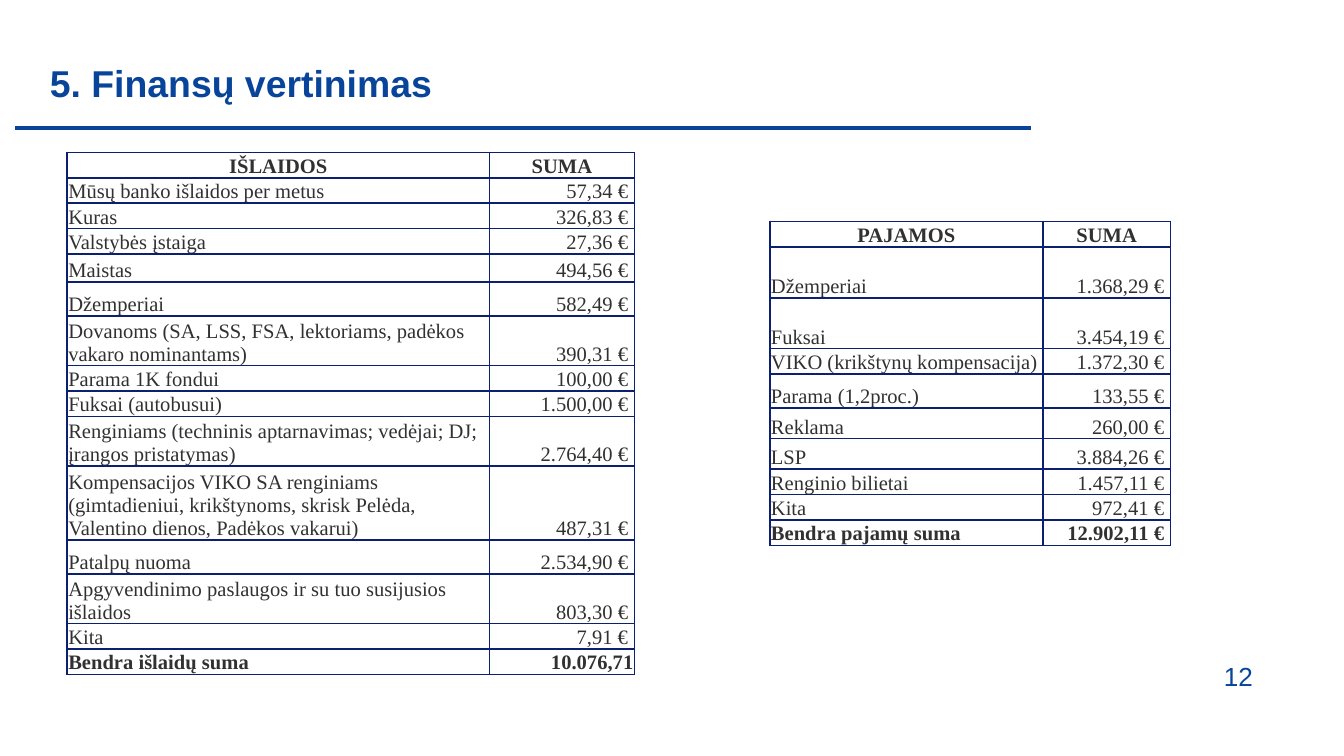
from dataclasses import dataclass

from lxml import etree
from pptx import Presentation
from pptx.dml.color import RGBColor
from pptx.enum.shapes import MSO_CONNECTOR
from pptx.enum.text import MSO_ANCHOR, PP_ALIGN
from pptx.oxml.ns import qn
from pptx.util import Cm, Pt

LEFT, CENTER, RIGHT = PP_ALIGN.LEFT, PP_ALIGN.CENTER, PP_ALIGN.RIGHT
MIDDLE, BOTTOM = MSO_ANCHOR.MIDDLE, MSO_ANCHOR.BOTTOM
STRAIGHT = MSO_CONNECTOR.STRAIGHT

BLUE, NAVY, INK = "08459A", "0B2070", "313132"
SINGLE, RELAXED, TALL, DOUBLE, TRIPLE = 0.48, 0.58, 0.64, 0.94, 1.4


@dataclass
class Entry:
    label: str
    amount: str
    height: float = SINGLE


@dataclass
class Ledger:
    left: float
    top: float
    label_width: float
    amount_width: float
    entries: list[Entry]


EXPENSES = Ledger(1.27, 2.88, 7.98, 2.74, [
    Entry("IŠLAIDOS", "SUMA"),
    Entry("Mūsų banko išlaidos per metus", "57,34 €"),
    Entry("Kuras", "326,83 €"),
    Entry("Valstybės įstaiga", "27,36 €"),
    Entry("Maistas", "494,56 €", 0.53),
    Entry("Džemperiai", "582,49 €", TALL),
    Entry("Dovanoms (SA, LSS, FSA, lektoriams, padėkos vakaro nominantams)", "390,31 €", DOUBLE),
    Entry("Parama 1K fondui", "100,00 €"),
    Entry("Fuksai (autobusui)", "1.500,00 €"),
    Entry("Renginiams (techninis aptarnavimas; vedėjai; DJ; įrangos pristatymas)", "2.764,40 €", DOUBLE),
    Entry("Kompensacijos VIKO SA renginiams (gimtadieniui, krikštynoms, skrisk Pelėda, "
          "Valentino dienos, Padėkos vakarui)", "487,31 €", TRIPLE),
    Entry("Patalpų nuoma", "2.534,90 €", TALL),
    Entry("Apgyvendinimo paslaugos ir su tuo susijusios išlaidos", "803,30 €", DOUBLE),
    Entry("Kita", "7,91 €"),
    Entry("Bendra išlaidų suma", "10.076,71"),
])

INCOME = Ledger(14.55, 4.19, 5.16, 2.41, [
    Entry("PAJAMOS", "SUMA"),
    Entry("Džemperiai", "1.368,29 €", 2 * SINGLE),
    Entry("Fuksai", "3.454,19 €", 2 * SINGLE),
    Entry("VIKO (krikštynų kompensacija)", "1.372,30 €"),
    Entry("Parama (1,2proc.)", "133,55 €", TALL),
    Entry("Reklama", "260,00 €", RELAXED),
    Entry("LSP", "3.884,26 €", RELAXED),
    Entry("Renginio bilietai", "1.457,11 €"),
    Entry("Kita", "972,41 €"),
    Entry("Bendra pajamų suma", "12.902,11 €"),
])


def rgb(value: str) -> RGBColor:
    return RGBColor.from_string(value)


def write(frame, text: str, *, size: float, color: str, font: str = "Arial",
          bold: bool = False, align=LEFT) -> None:
    frame.word_wrap = True
    paragraph = frame.paragraphs[0]
    paragraph.alignment = align
    run = paragraph.add_run()
    run.text = text
    run.font.name = font
    run.font.size = Pt(size)
    run.font.bold = bold
    run.font.color.rgb = rgb(color)


def add_borders(cell, color: str, width: float) -> None:
    properties = cell._tc.get_or_add_tcPr()
    for side in ("a:lnL", "a:lnR", "a:lnT", "a:lnB"):
        border = etree.SubElement(properties, qn(side), w=str(Pt(width)))
        fill = etree.SubElement(border, qn("a:solidFill"))
        etree.SubElement(fill, qn("a:srgbClr"), val=color)


def fill_cell(cell, text: str, bold: bool, align) -> None:
    add_borders(cell, NAVY, 1)
    cell.fill.background()
    cell.vertical_anchor = BOTTOM
    cell.margin_left = cell.margin_top = Cm(0.02)
    cell.margin_right = Cm(0.12 if text.endswith("€") else 0.02)
    cell.margin_bottom = 0
    write(cell.text_frame, text, size=11, color=INK, font="Times New Roman",
          bold=bold, align=align)


def add_ledger(slide, ledger: Ledger) -> None:
    widths = (ledger.label_width, ledger.amount_width)
    height = sum(entry.height for entry in ledger.entries)
    table = slide.shapes.add_table(
        len(ledger.entries), len(widths), Cm(ledger.left), Cm(ledger.top),
        Cm(sum(widths)), Cm(height)).table
    table.first_row = table.horz_banding = False
    for column, width in zip(table.columns, widths):
        column.width = Cm(width)
    last = len(ledger.entries) - 1
    for index, entry in enumerate(ledger.entries):
        table.rows[index].height = Cm(entry.height)
        bold = index in (0, last)
        alignments = (CENTER, CENTER) if index == 0 else (LEFT, RIGHT)
        for column, text in enumerate((entry.label, entry.amount)):
            fill_cell(table.cell(index, column), text, bold, alignments[column])


def add_rule(slide, left: float, right: float, y: float) -> None:
    rule = slide.shapes.add_connector(STRAIGHT, Cm(left), Cm(y), Cm(right), Cm(y))
    rule.line.color.rgb = rgb(BLUE)
    rule.line.width = Pt(2)
    etree.SubElement(rule._element.spPr, qn("a:effectLst"))


def main() -> None:
    presentation = Presentation()
    presentation.slide_width, presentation.slide_height = Cm(25.4), Cm(14.29)
    slide = presentation.slides.add_slide(presentation.slide_layouts[5])

    heading = slide.shapes.title
    heading.left, heading.top = Cm(0.69), Cm(0.91)
    heading.width, heading.height = Cm(24.03), Cm(1.3)
    heading.text_frame.vertical_anchor = MIDDLE
    write(heading.text_frame, "5. Finansų vertinimas", size=20, color=BLUE, bold=True)

    add_rule(slide, 0.28, 19.48, 2.42)
    for ledger in (EXPENSES, INCOME):
        add_ledger(slide, ledger)

    page_number = slide.shapes.add_textbox(Cm(22.68), Cm(12.4), Cm(1.45), Cm(0.76))
    page_number.text_frame.vertical_anchor = MIDDLE
    write(page_number.text_frame, "12", size=14, color=BLUE, align=CENTER)

    presentation.save("out.pptx")


if __name__ == "__main__":
    main()
